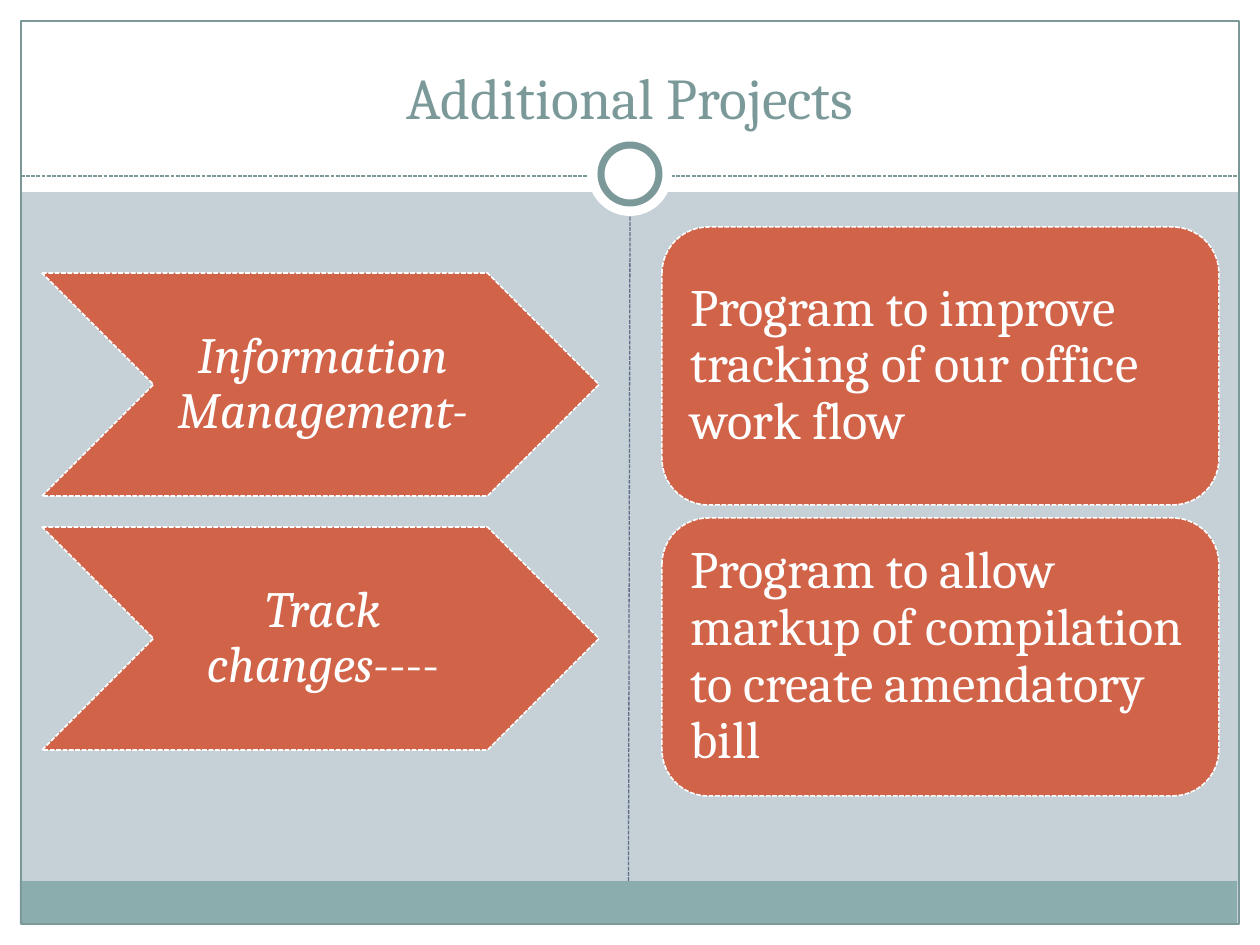
from dataclasses import dataclass

from pptx import Presentation
from pptx.dml.color import RGBColor
from pptx.enum.dml import MSO_LINE
from pptx.enum.shapes import MSO_CONNECTOR, MSO_SHAPE
from pptx.enum.text import MSO_ANCHOR, MSO_AUTO_SIZE, PP_ALIGN
from pptx.oxml.ns import qn
from pptx.util import Pt
from lxml import etree

RECT, OVAL = MSO_SHAPE.RECTANGLE, MSO_SHAPE.OVAL
CHEVRON, ROUNDED = MSO_SHAPE.CHEVRON, MSO_SHAPE.ROUNDED_RECTANGLE
DASH = MSO_LINE.SQUARE_DOT  # written to the file as sysDash
LEFT, CENTER = PP_ALIGN.LEFT, PP_ALIGN.CENTER
MIDDLE, BOTTOM = MSO_ANCHOR.MIDDLE, MSO_ANCHOR.BOTTOM


@dataclass(frozen=True)
class Theme:
    font: str = "Cambria"
    background: str = "C5D1D7"
    white: str = "FFFFFF"
    teal: str = "7C999A"
    footer: str = "8CADAE"
    divider: str = "646B86"
    accent: str = "D16349"
    title_size: int = 33
    project_size: int = 29
    purpose_size: int = 30


THEME = Theme()
EMU_PER_PX = 914400 / 126
WIDTH, HEIGHT, MARGIN = 1260, 945, 21

TITLE = "Additional Projects"
# Each project: name as (text, italic) runs, then its purpose
PROJECTS = [
    ([("Information Management-", True)],
     "Program to improve tracking of our office work flow"),
    ([("Track changes-", True), ("---", False)],
     "Program to allow markup of compilation to create amendatory bill"),
]

HEADER_HEIGHT = 192
WHITE_BANDS = [
    (0, HEIGHT - MARGIN, WIDTH, MARGIN),
    (0, 0, WIDTH, HEADER_HEIGHT),
    (0, 0, MARGIN, HEIGHT),
    (WIDTH - MARGIN, 0, MARGIN, HEIGHT),
]
FOOTER_BAR = (20, 881, 1217, 43)
FRAME = (MARGIN, MARGIN, WIDTH - 2 * MARGIN, HEIGHT - 2 * MARGIN)
HEADER_RULE_Y = 176
DISC = (588, 132, 84, 84)
RING = (601, 145, 58, 58)
TITLE_BOX = (42, 32, 1176, 105)

# First box of each column, and the distance to the box below
NAME_BOX, NAME_STEP = (42, 273, 557, 223), 254
PURPOSE_BOX, PURPOSE_STEP = (662, 227, 557, 278), 291
NAME_INSETS = (5, 3, 0, 3)
PURPOSE_INSETS = (15, 15, 15, 15)


def px(*lengths):
    return [round(length * EMU_PER_PX) for length in lengths]


def rgb(value):
    return RGBColor.from_string(value)


def style_line(line, color, width, dash=None):
    line.color.rgb = rgb(color)
    line.width = Pt(width)
    if dash:
        line.dash_style = dash


def add_shape(page, kind, box, fill=None, line=None, width=0.75, dash=None):
    shape = page.shapes.add_shape(kind, *px(*box))
    shape.shadow.inherit = False
    if fill:
        shape.fill.solid()
        shape.fill.fore_color.rgb = rgb(fill)
    else:
        shape.fill.background()
    if line:
        style_line(shape.line, line, width, dash)
    else:
        shape.line.fill.background()
    return shape


def add_rule(page, start, end, color):
    rule = page.shapes.add_connector(MSO_CONNECTOR.STRAIGHT, *px(*start, *end))
    style_line(rule.line, color, 0.75, DASH)
    etree.SubElement(rule._element.spPr, qn("a:effectLst"))
    return rule


def write(shape, runs, size, color, align, anchor, insets=None, spacing=None):
    """Fill a shape with one paragraph of (text, italic) runs."""
    frame = shape.text_frame
    frame.word_wrap = True
    frame.auto_size = MSO_AUTO_SIZE.NONE
    frame.vertical_anchor = anchor
    if insets:
        (frame.margin_left, frame.margin_top,
         frame.margin_right, frame.margin_bottom) = px(*insets)
    para = frame.paragraphs[0]
    para.alignment = align
    if spacing:
        para.line_spacing = spacing
    for text, italic in runs:
        span = para.add_run()
        span.text = text
        span.font.name = THEME.font
        span.font.size = Pt(size)
        span.font.italic = italic
        span.font.color.rgb = rgb(color)


def add_backdrop(page):
    page.background.fill.solid()
    page.background.fill.fore_color.rgb = rgb(THEME.background)
    for band in WHITE_BANDS:
        add_shape(page, RECT, band, THEME.white)
    footer = add_shape(page, RECT, FOOTER_BAR, THEME.footer)
    add_shape(page, RECT, FRAME, line=THEME.teal)
    add_rule(page, (MARGIN, HEADER_RULE_Y), (WIDTH - MARGIN, HEADER_RULE_Y), THEME.teal)
    add_shape(page, OVAL, DISC, THEME.white)
    add_shape(page, OVAL, RING, THEME.white, THEME.teal, 4)
    middle = WIDTH // 2
    divider = add_rule(page, (middle, FOOTER_BAR[1]), (middle, DISC[1] + DISC[3]),
                       THEME.divider)
    divider.begin_connect(footer, 0)


def add_title(page):
    title = page.shapes.title
    title.left, title.top, title.width, title.height = px(*TITLE_BOX)
    write(title, [(TITLE, False)], THEME.title_size, THEME.teal, CENTER, BOTTOM)
    page.shapes._spTree.append(title._element)  # in front of the white header


def add_column(page, kind, first_box, step, entries, size, align, insets):
    left, top, width, height = first_box
    for row, runs in enumerate(entries):
        box = (left, top + row * step, width, height)
        shape = add_shape(page, kind, box, THEME.accent, THEME.white, 0.9, DASH)
        write(shape, runs, size, THEME.white, align, MIDDLE, insets, 0.9)


def main():
    deck = Presentation()
    deck.slide_width, deck.slide_height = px(WIDTH, HEIGHT)
    page = deck.slides.add_slide(deck.slide_layouts.get_by_name("Title Only"))
    add_backdrop(page)
    add_title(page)
    names = [name for name, _ in PROJECTS]
    purposes = [[(purpose, False)] for _, purpose in PROJECTS]
    add_column(page, CHEVRON, NAME_BOX, NAME_STEP, names,
               THEME.project_size, CENTER, NAME_INSETS)
    add_column(page, ROUNDED, PURPOSE_BOX, PURPOSE_STEP, purposes,
               THEME.purpose_size, LEFT, PURPOSE_INSETS)
    deck.save("out.pptx")


if __name__ == "__main__":
    main()
